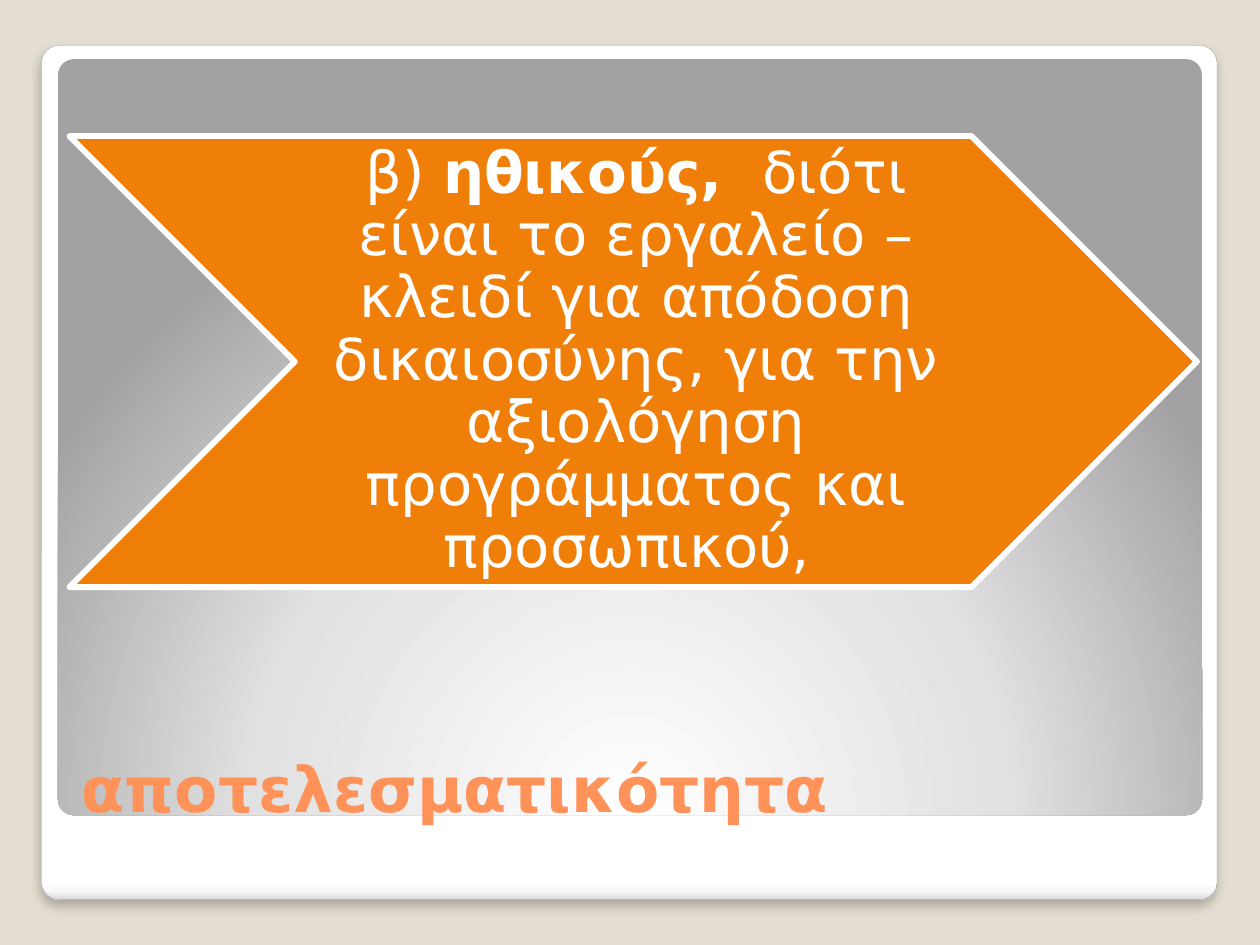
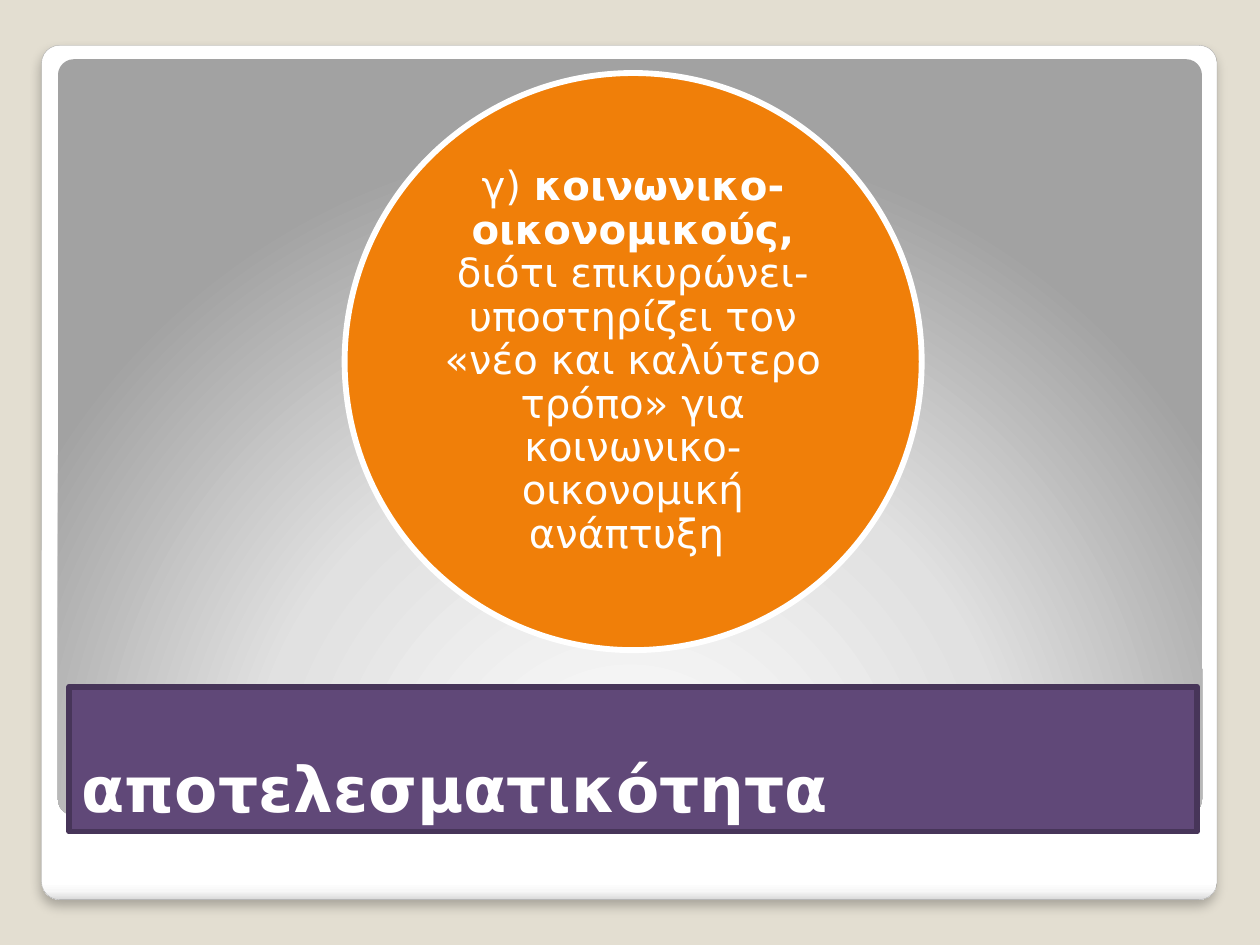
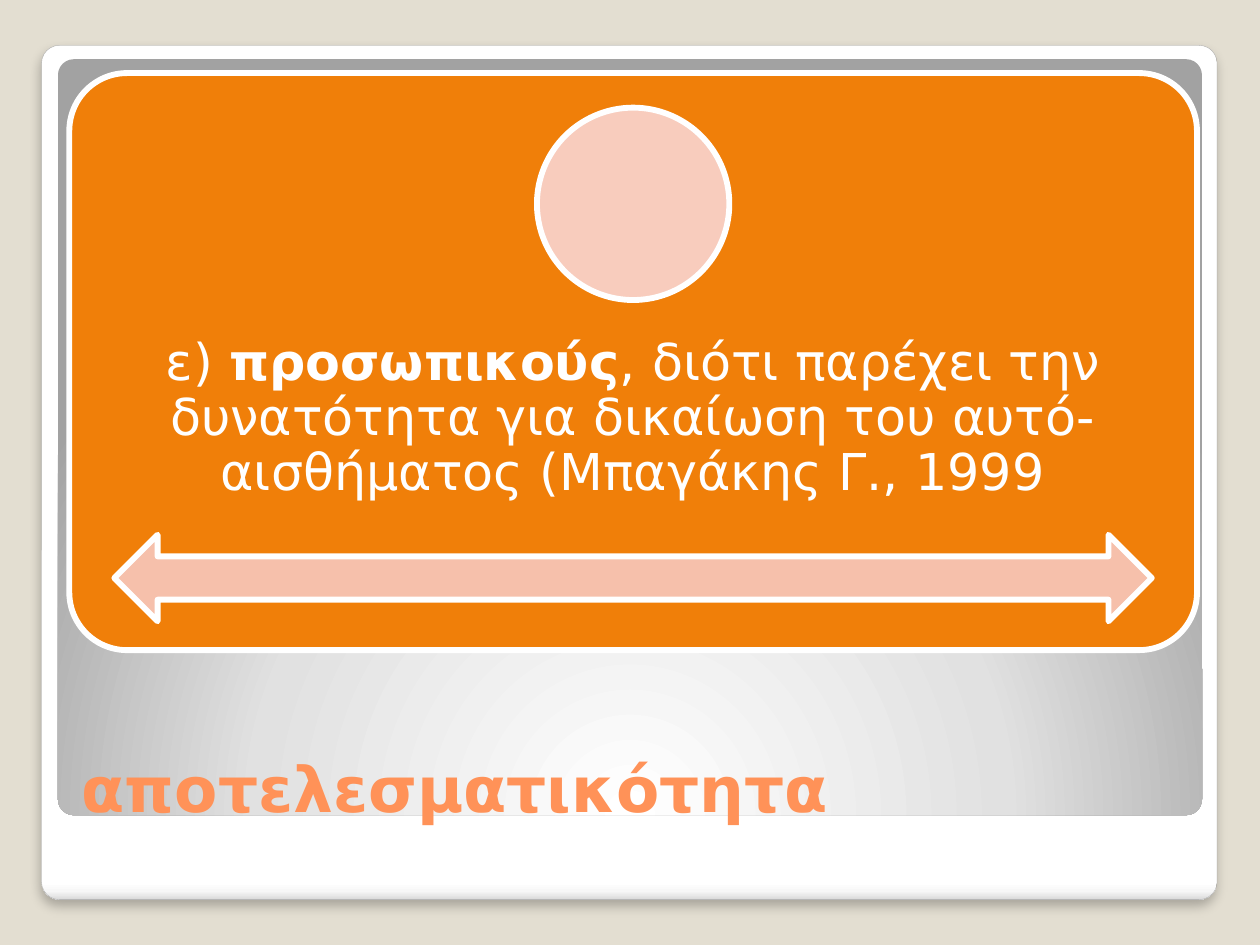
from dataclasses import dataclass
from math import sqrt

from pptx import Presentation
from pptx import oxml
from pptx.dml.color import RGBColor
from pptx.enum import shapes, text
from pptx.oxml import ns
from pptx.util import Inches, Pt

FONT = "DejaVu Sans"
TITLE = "αποτελεσματικότητα"
COLORS = {
    "backdrop": "E3DED1",
    "frame_line": "A4A4A4",
    "orange": "F07F09",
    "white": "FFFFFF",
    "title": "FF9258",
    "purple": "604878",
    "purple_line": "473559",
    "pale_pink": "F8CCBD",
    "pink": "F6C0AB",
}
OUTLINE = 3.35
FRAME_STOPS = [(0, "FFFFFF"), (98, "FFFFFF"), (99, "F7F7F7"), (100, "DADADA")]
PANEL_STOPS = [(0, "FFFFFF"), (55, "E1E1E1"), (100, "A2A2A2")]
DOWNWARD = '<a:lin ang="5400000" scaled="0"/>'
FROM_BELOW = ('<a:path path="circle"><a:fillToRect l="50000" t="175000" '
              'r="50000" b="-75000"/></a:path>')
SHADOW = ('<a:outerShdw {} blurRad="76200" dist="50800" dir="5400000" algn="tl" '
          'rotWithShape="0"><a:srgbClr val="000000"><a:alpha val="25000"/>'
          '</a:srgbClr></a:outerShdw>')


@dataclass
class Box:
    left: float
    top: float
    width: float
    height: float

    def inner(self, x, y, width, height):
        """Return an inner box given as shares of this one."""
        return Box(self.left + x * self.width, self.top + y * self.height,
                   width * self.width, height * self.height)

    def centered(self, width, height):
        return Box(self.left + (self.width - width) / 2,
                   self.top + (self.height - height) / 2, width, height)

    def emu(self):
        return [Inches(v) for v in (self.left, self.top, self.width, self.height)]


FRAME = Box(0.33, 0.36, 9.33, 6.78)
PANEL = Box(0.46, 0.47, 9.08, 6)
STAGE = Box(0.55, 0.58, 8.95, 4.58)
TITLE_BOX = Box(0.55, 5.45, 8.95, 1.15)


def color(name):
    return RGBColor.from_string(COLORS[name])


def add_figure(page, kind, box, fill=None, line=None, weight=OUTLINE, corner=None):
    shape = page.shapes.add_shape(kind, *box.emu())
    shape.shadow.inherit = False
    if corner is not None:
        shape.adjustments[0] = corner
    if fill:
        shape.fill.solid()
        shape.fill.fore_color.rgb = color(fill)
    else:
        shape.fill.background()
    if line:
        shape.line.color.rgb = color(line)
        shape.line.width = Pt(weight)
    else:
        shape.line.fill.background()
    return shape


def set_gradient(shape, stops, direction):
    """Replace the fill by a gradient of (percent, colour) stops."""
    marks = "".join(f'<a:gs pos="{pos * 1000}"><a:srgbClr val="{tone}"/></a:gs>'
                    for pos, tone in stops)
    gradient = oxml.parse_xml(f'<a:gradFill {ns.nsdecls("a")} rotWithShape="1">'
                              f'<a:gsLst>{marks}</a:gsLst>{direction}</a:gradFill>')
    properties = shape._element.spPr
    properties.replace(properties.find(ns.qn("a:noFill")), gradient)


def add_page(deck):
    """Add a blank slide with the white frame and the grey panel."""
    page = deck.slides.add_slide(deck.slide_layouts[6])
    rounded = shapes.MSO_SHAPE.ROUNDED_RECTANGLE
    frame = add_figure(page, rounded, FRAME, line="frame_line", weight=0.16,
                       corner=0.021)
    set_gradient(frame, FRAME_STOPS, DOWNWARD)
    effects = frame._element.spPr.find(ns.qn("a:effectLst"))
    effects.append(oxml.parse_xml(SHADOW.format(ns.nsdecls("a"))))
    panel = add_figure(page, rounded, PANEL, corner=0.021)
    set_gradient(panel, PANEL_STOPS, FROM_BELOW)
    return page


def style_span(span, size, tone, bold):
    span.font.name = FONT
    span.font.size = Pt(size)
    span.font.bold = bold
    span.font.color.rgb = color(tone)


def add_title(page, tone="title", fill=None, line=None):
    band = add_figure(page, shapes.MSO_SHAPE.RECTANGLE, TITLE_BOX, fill, line)
    frame = band.text_frame
    frame.text = TITLE
    frame.vertical_anchor = text.MSO_ANCHOR.BOTTOM
    para = frame.paragraphs[0]
    para.alignment = text.PP_ALIGN.LEFT
    style_span(para.runs[0], 36, tone, True)


def add_reason(page, box, phrases, size, margins):
    """Write centred text whose second phrase is bold."""
    frame = page.shapes.add_textbox(*box.emu()).text_frame
    frame.word_wrap = True
    frame.vertical_anchor = text.MSO_ANCHOR.MIDDLE
    (frame.margin_left, frame.margin_top,
     frame.margin_right, frame.margin_bottom) = [Inches(m) for m in margins]
    para = frame.paragraphs[0]
    para.alignment = text.PP_ALIGN.CENTER
    para.line_spacing = 0.9
    for index, words in enumerate(phrases):
        span = para.add_run()
        span.text = words
        style_span(span, size, "white", index == 1)


def add_chevron(page, stage, phrases):
    chevron = stage.centered(stage.width, 0.4 * stage.width)
    add_figure(page, shapes.MSO_SHAPE.CHEVRON, chevron, "orange", "white")
    add_reason(page, chevron.inner(0.2, 0, 0.6, 1), phrases, 33,
               (0.05, 0.02, 0, 0.02))


def add_disc(page, stage, phrases):
    disc = stage.centered(stage.height, stage.height)
    add_figure(page, shapes.MSO_SHAPE.OVAL, disc, "orange", "white")
    side = stage.height / sqrt(2)
    add_reason(page, disc.centered(side, side), phrases, 23, [0.03] * 4)


def add_card(page, stage, phrases):
    add_figure(page, shapes.MSO_SHAPE.ROUNDED_RECTANGLE, stage, "orange", "white",
               corner=0.1)
    add_reason(page, stage.inner(0, 0.4, 1, 0.4), phrases, 29, [0.23] * 4)
    diameter = stage.height / 3
    dot = stage.inner(0, 0.06, 1, 1 / 3).centered(diameter, diameter)
    add_figure(page, shapes.MSO_SHAPE.OVAL, dot, "pale_pink", "white")
    add_figure(page, shapes.MSO_SHAPE.LEFT_RIGHT_ARROW,
               stage.inner(0.04, 0.8, 0.92, 0.15), "pink", "white")


def main():
    deck = Presentation()
    deck.slide_width, deck.slide_height = Inches(10), Inches(7.5)
    backdrop = deck.slide_master.background.fill
    backdrop.solid()
    backdrop.fore_color.rgb = color("backdrop")

    page = add_page(deck)
    add_title(page)
    add_chevron(page, STAGE, [
        "β) ", "ηθικούς,  ",
        "διότι είναι το εργαλείο –κλειδί για απόδοση δικαιοσύνης, "
        "για την αξιολόγηση προγράμματος και προσωπικού, "])

    page = add_page(deck)
    add_title(page, "white", "purple", "purple_line")
    add_disc(page, STAGE, [
        "γ) ", "κοινωνικο-οικονομικούς, ",
        "διότι επικυρώνει-υποστηρίζει τον «νέο και καλύτερο τρόπο» "
        "για κοινωνικο-οικονομική ανάπτυξη "])

    page = add_page(deck)
    add_title(page)
    add_card(page, STAGE, [
        "ε) ", "προσωπικούς",
        ", διότι παρέχει την δυνατότητα για δικαίωση του "
        "αυτό-αισθήματος (Μπαγάκης Γ., 1999"])

    deck.save("out.pptx")


if __name__ == "__main__":
    main()
